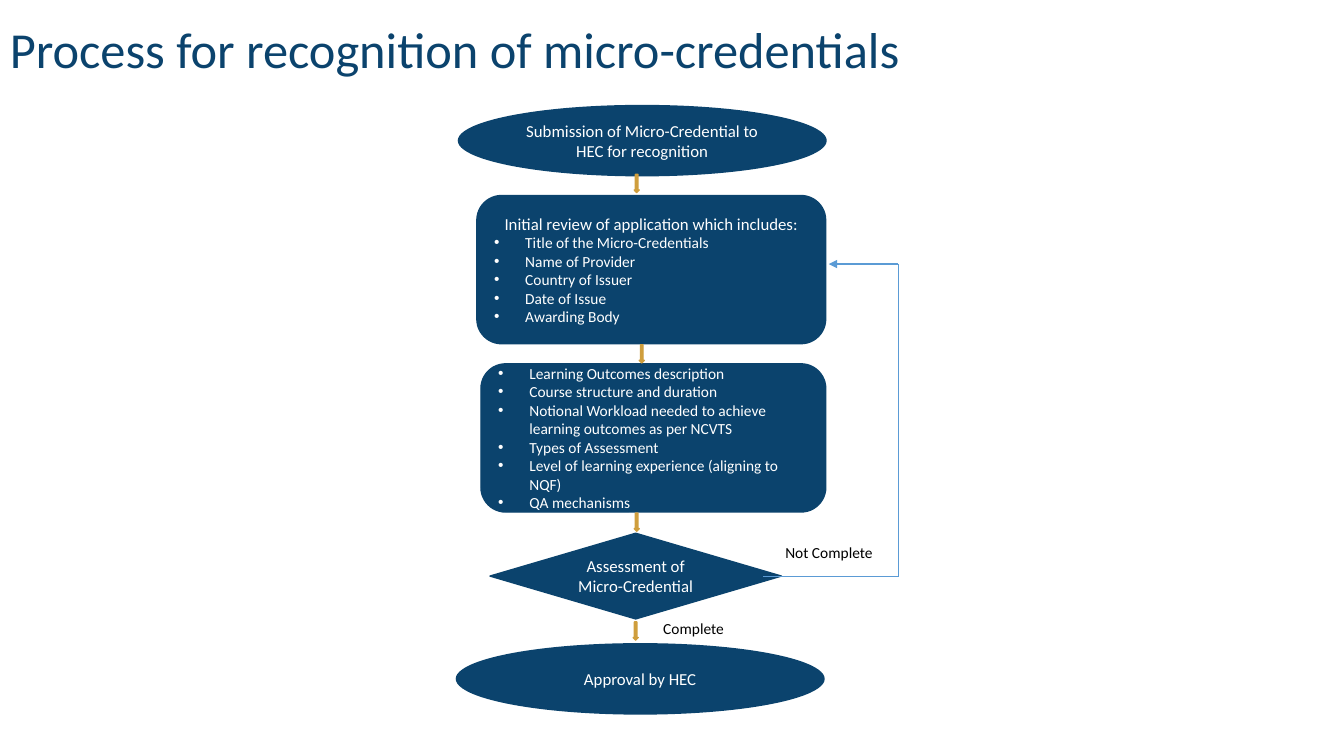
from lxml import etree
from pptx import Presentation
from pptx import util as u
from pptx.dml.color import RGBColor
from pptx.enum import shapes, text
from pptx.oxml.ns import qn

NAVY, GOLD, BLUE, WHITE, BLACK = "0B436D", "CF9E3D", "5B9BD5", "FFFFFF", "000000"
SHAPE = shapes.MSO_SHAPE


def color(hex_code):
    return RGBColor.from_string(hex_code)


class FlowSlide:
    font = "Calibri"
    step_size, detail_size = 12, 11
    bullet_indent = u.Inches(0.31)

    def __init__(self, slide):
        self.slide = slide

    def add_words(self, paragraph, words, size, hex_code):
        run = paragraph.add_run()
        run.text = words
        run.font.name = self.font
        run.font.size = u.Pt(size)
        run.font.color.rgb = color(hex_code)

    def bullet(self, paragraph):
        """Give the paragraph a round bullet with a hanging indent."""
        props = paragraph._p.get_or_add_pPr()
        props.set("marL", str(self.bullet_indent))
        props.set("indent", str(-self.bullet_indent))
        etree.SubElement(props, qn("a:buFont")).set("typeface", "Arial")
        etree.SubElement(props, qn("a:buChar")).set("char", "•")

    def shape(self, kind, box, fill, outlined=True):
        item = self.slide.shapes.add_shape(kind, *map(u.Inches, box))
        item.shadow.inherit = False
        item.fill.solid()
        item.fill.fore_color.rgb = color(fill)
        if outlined:
            item.line.color.rgb = color(fill)
            item.line.width = u.Pt(1)
        else:
            item.line.fill.background()
        return item

    def step(self, kind, box, heading=None, details=(), outlined=True):
        """Draw a flowchart step with a centred heading and bulleted details."""
        frame = self.shape(kind, box, NAVY, outlined).text_frame
        frame.word_wrap = True
        frame.vertical_anchor = text.MSO_ANCHOR.MIDDLE
        paragraph = frame.paragraphs[0]
        if heading:
            paragraph.alignment = text.PP_ALIGN.CENTER
            self.add_words(paragraph, heading, self.step_size, WHITE)
        for index, detail in enumerate(details):
            if heading or index:
                paragraph = frame.add_paragraph()
            self.bullet(paragraph)
            paragraph.alignment = text.PP_ALIGN.LEFT
            self.add_words(paragraph, detail, self.detail_size, WHITE)

    def down_arrow(self, left, top):
        self.shape(SHAPE.DOWN_ARROW, (left, top, 0.05, 0.18), GOLD)

    def line(self, start, end, arrow=False):
        link = self.slide.shapes.add_connector(
            shapes.MSO_CONNECTOR.STRAIGHT, *map(u.Inches, (*start, *end)))
        link.line.color.rgb = color(BLUE)
        link.line.width = u.Pt(1)
        props = link._element.spPr
        if arrow:
            etree.SubElement(props.find(qn("a:ln")), qn("a:tailEnd")).set("type", "triangle")
        etree.SubElement(props, qn("a:effectLst"))

    def label(self, words, box, size=detail_size, hex_code=BLACK,
              anchor=text.MSO_ANCHOR.TOP, spacing=1.0):
        frame = self.slide.shapes.add_textbox(*map(u.Inches, box)).text_frame
        frame.word_wrap = True
        frame.vertical_anchor = anchor
        paragraph = frame.paragraphs[0]
        paragraph.line_spacing = spacing
        self.add_words(paragraph, words, size, hex_code)


def main():
    deck = Presentation()
    deck.slide_width, deck.slide_height = u.Inches(13.33), u.Inches(7.5)
    flow = FlowSlide(deck.slides.add_slide(deck.slide_layouts[6]))

    flow.label("Process for recognition of micro-credentials", (0, 0.11, 12.26, 0.81),
               size=36, hex_code=NAVY, anchor=text.MSO_ANCHOR.MIDDLE, spacing=0.9)

    flow.step(SHAPE.OVAL, (4.54, 1.04, 3.66, 0.71),
              "Submission of Micro-Credential to HEC for recognition", outlined=False)
    flow.step(SHAPE.ROUNDED_RECTANGLE, (4.73, 1.94, 3.46, 1.47),
              "Initial review of application which includes:",
              ["Title of the Micro-Credentials", "Name of Provider", "Country of Issuer",
               "Date of Issue", "Awarding Body"])
    flow.step(SHAPE.ROUNDED_RECTANGLE, (4.77, 3.61, 3.42, 1.47),
              details=["Learning Outcomes description", "Course structure and duration",
                       "Notional Workload needed to achieve learning outcomes as per NCVTS",
                       "Types of Assessment", "Level of learning experience (aligning to NQF)",
                       "QA mechanisms"])
    flow.step(SHAPE.DIAMOND, (4.86, 5.29, 2.89, 0.85), "Assessment of Micro-Credential")
    flow.step(SHAPE.OVAL, (4.52, 6.38, 3.66, 0.71), "Approval by HEC", outlined=False)

    for left, top in [(6.29, 1.73), (6.34, 3.42), (6.29, 5.09), (6.28, 6.17)]:
        flow.down_arrow(left, top)

    return_x, review_y, assessment_y = 8.91, 2.62, 5.72
    flow.line((return_x, review_y), (8.22, review_y), arrow=True)
    flow.line((return_x, review_y), (return_x, assessment_y))
    flow.line((7.57, assessment_y), (return_x, assessment_y))

    flow.label("Not Complete", (7.69, 5.34, 1.3, 0.29))
    flow.label("Complete", (6.48, 6.09, 1.3, 0.29))

    deck.save("out.pptx")


if __name__ == "__main__":
    main()
